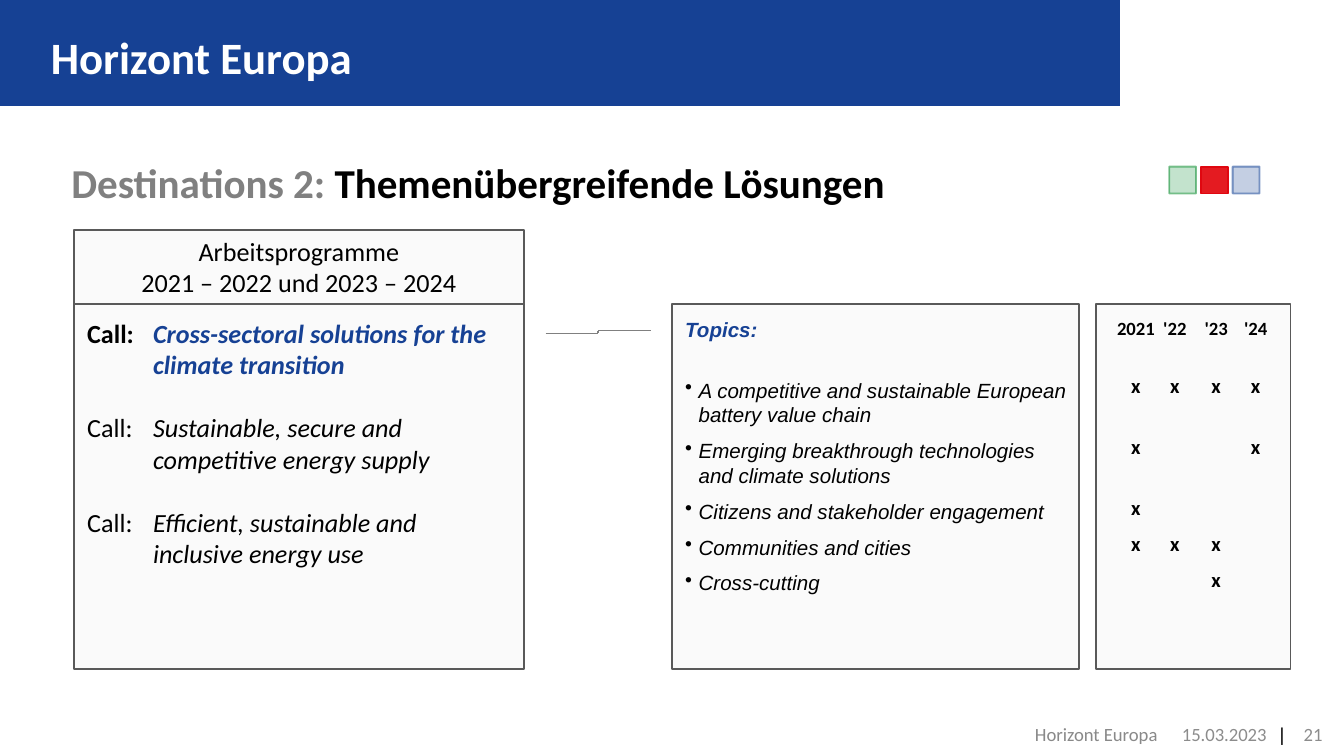
import itertools

import pptx
import pptx.dml.color
import pptx.enum.shapes
import pptx.enum.text
import pptx.oxml
import pptx.oxml.ns
import pptx.util

Pt = pptx.util.Pt
RGB = pptx.dml.color.RGBColor
ALIGN = pptx.enum.text.PP_ALIGN
ANCHOR = pptx.enum.text.MSO_ANCHOR
RECT = pptx.enum.shapes.MSO_SHAPE.RECTANGLE
LINE = pptx.enum.shapes.MSO_CONNECTOR.STRAIGHT

BLUE = RGB(0x16, 0x41, 0x94)
WHITE = RGB(0xFF, 0xFF, 0xFF)
BLACK = RGB(0, 0, 0)
GRAY = RGB(0x80, 0x80, 0x80)
PALE = RGB(0xFA, 0xFA, 0xFA)
EDGE = RGB(0x59, 0x59, 0x59)
DATE = RGB(0x8C, 0x8C, 0x8C)
FOOT = RGB(0x89, 0x89, 0x89)
MARKS = [
    (RGB(0x10, 0x92, 0x38), RGB(0x01, 0x88, 0x26), True),
    (RGB(0xE4, 0x1B, 0x21), RGB(0xE0, 0x07, 0x10), False),
    (RGB(0x14, 0x43, 0x93), RGB(0x04, 0x36, 0x8F), True),
]
CALLS = [
    "Cross-sectoral solutions for the climate transition",
    "Sustainable, secure and competitive energy supply",
    "Efficient, sustainable and inclusive energy use",
]
TOPICS = [
    "A competitive and sustainable European battery value chain",
    "Emerging breakthrough technologies and climate solutions",
    "Citizens and stakeholder engagement",
    "Communities and cities",
    "Cross-cutting",
]
YEARS = [
    ("\t2021\t'22\t'23\t'24", 10, 0),
    ("\tx\tx\tx\tx", 11, 18),
    ("\tx\t\t\tx", 11, 19.4),
    ("\tx", 11, 19.4),
    ("\tx\tx\tx", 11, 6),
    ("\t\t\tx", 11, 6),
]


def apply(thing, form):
    """Set each attribute in form on thing."""
    for key, value in form.items():
        setattr(thing, key, value)


def place(shape, box):
    """Move a shape to a box given in points."""
    apply(shape, dict(zip(("left", "top", "width", "height"), map(Pt, box))))


def frame(shape, pads=(7.2, 7.2, 7.2, 7.2), anchor=ANCHOR.TOP, wrap=True):
    """Set the text margins and anchor of a shape and return its frame."""
    text = shape.text_frame
    names = ("margin_left", "margin_top", "margin_right", "margin_bottom")
    apply(text, dict(zip(names, map(Pt, pads))))
    apply(text, {"auto_size": pptx.enum.text.MSO_AUTO_SIZE.NONE,
                 "vertical_anchor": anchor, "word_wrap": wrap})
    return text


def write(text, runs, size, face="Calibri", first=True, before=0,
          align=ALIGN.LEFT, hang=0, tabs=(), mark=None, lead=None):
    """Write one paragraph from (text, colour, bold, italic) runs."""
    para = text.paragraphs[0] if first else text.add_paragraph()
    apply(para, {"alignment": align, "space_before": Pt(before)})
    if lead:
        para.line_spacing = Pt(lead)
    props = para._p.get_or_add_pPr()
    if hang or not tabs:
        props.set("marL", str(Pt(hang)))
        props.set("indent", str(-Pt(hang)))
    bullet = pptx.oxml.ns.qn("a:buChar" if mark else "a:buNone")
    props.append(props.makeelement(bullet, {"char": mark} if mark else {}))
    if tabs:
        stops = props.makeelement(pptx.oxml.ns.qn("a:tabLst"), {})
        for stop, kind in tabs:
            stops.append(stops.makeelement(
                pptx.oxml.ns.qn("a:tab"), {"pos": str(Pt(stop)), "algn": kind}))
        props.append(stops)
    for words, tint, bold, slant in runs:
        run = para.add_run()
        run.text = words
        apply(run.font, {"name": face, "size": Pt(size), "bold": bold, "italic": slant})
        run.font.color.rgb = tint


def fade(fill, share):
    """Make a solid fill partly clear."""
    tint = fill._xPr.find(".//" + pptx.oxml.ns.qn("a:srgbClr"))
    tint.append(tint.makeelement(
        pptx.oxml.ns.qn("a:alpha"), {"val": str(share * 1000)}))


def panel(slide, box, fill=PALE, edge=EDGE):
    """Add a plain box with a fill and an optional edge."""
    shape = slide.shapes.add_shape(RECT, *map(Pt, box))
    shape.shadow.inherit = False
    shape.fill.solid()
    shape.fill.fore_color.rgb = fill
    if edge is None:
        shape.line.fill.background()
    else:
        shape.line.color.rgb = edge
        shape.line.width = Pt(1)
    return shape


def header(slide, box):
    """Draw the blue bar with the slide title on it."""
    left, top, width, height = box
    bar = panel(slide, box, BLUE, None)
    slide.shapes._spTree.insert(2, bar._element)
    title = slide.shapes.title
    place(title, (left + 20, top + 10, width - 61, height - 16.5))
    text = frame(title, (7.2, 3.6, 7.2, 3.6), ANCHOR.MIDDLE)
    write(text, [("Horizont Europa", WHITE, True, False)], 24)


def heading(slide, box):
    """Fill the body placeholder with the heading."""
    body = slide.placeholders[1]
    place(body, box)
    text = frame(body, (7.2, 3.6, 7.2, 3.6), ANCHOR.MIDDLE)
    write(text, [("Destinations 2: ", GRAY, True, False),
                 ("Themenübergreifende Lösungen", BLACK, True, False)], 22)


def program(slide, box):
    """Draw the work programme head and its list of calls."""
    left, top, width, height = box
    cap = 39.6
    text = frame(panel(slide, (left, top, width, cap)), anchor=ANCHOR.MIDDLE)
    for rank, words in enumerate(("Arbeitsprogramme", "2021 – 2022 und 2023 – 2024")):
        write(text, [(words, BLACK, False, False)], 14,
              first=rank == 0, align=ALIGN.CENTER)
    text = frame(panel(slide, (left, top + cap, width, height - cap)))
    for rank, call in enumerate(CALLS):
        lead = rank == 0
        write(text, [("Call:\t", BLACK, lead, False),
                     (call, BLUE if lead else BLACK, lead, True)], 14,
              first=lead, before=0 if lead else 17, hang=35.3, tabs=[(35.3, "l")])


def topics(slide, box):
    """Draw the list of topics."""
    text = frame(panel(slide, box), (7.2, 7.2, 5, 7.2))
    write(text, [("Topics:", BLUE, True, True)], 11, "Arial", lead=13.2)
    for rank, topic in enumerate(TOPICS):
        write(text, [(topic, BLACK, False, True)], 11, "Arial", first=False,
              before=6 if rank else 19.2, hang=7.2, mark="•", lead=13.2)


def years(slide, box):
    """Draw the years in which each topic is open."""
    text = frame(panel(slide, box))
    tabs = [(stop, "ctr") for stop in (14.4, 35.3, 57.4, 78.6)]
    for rank, (words, size, before) in enumerate(YEARS):
        write(text, [(words, BLACK, True, False)], size,
              first=rank == 0, before=before, tabs=tabs)


def elbow(slide, box):
    """Draw the stepped line from the calls to the topics."""
    left, top, width, height = box
    mid, low = left + width / 2, top + height
    points = [(left, low), (mid, low), (mid, top), (left + width, top)]
    for start, end in itertools.pairwise(points):
        line = slide.shapes.add_connector(LINE, *map(Pt, start + end))
        line.line.color.rgb = GRAY
        line.line.width = Pt(0.75)
        props = line._element.spPr
        props.append(props.makeelement(pptx.oxml.ns.qn("a:effectLst"), {}))


def marks(slide, box):
    """Draw the row of small squares."""
    left, top, width, side = box
    step = (width - side) / (len(MARKS) - 1)
    for rank, (fill, edge, faint) in enumerate(MARKS):
        shape = panel(slide, (left + rank * step, top, side, side), fill, edge)
        if faint:
            fade(shape.fill, 25)
            fade(shape.line.fill, 50)


def footer(slide, box):
    """Write the footer, date, rule and page number."""
    left, top, width, height = box
    mid, right = ALIGN.CENTER, ALIGN.RIGHT
    parts = [
        ("Horizont Europa", 0, 334.8, FOOT, right, (7.2, 2.9, 7.2, 5.8)),
        ("15.03.2023", 336.2, 54.7, DATE, mid, (2.9, 2.9, 2.9, 5.8)),
        ("|", 390.2, 8.6, BLACK, mid, (2.9, 2.9, 2.9, 5.8)),
        ("21", width - 28.1, 28.1, DATE, right, (0, 2.9, 8.6, 5.8)),
    ]
    for words, shift, span, tint, align, pads in parts:
        shape = slide.shapes.add_textbox(*map(Pt, (left + shift, top, span, height)))
        text = frame(shape, pads, ANCHOR.MIDDLE, words != "|")
        face = "Arial" if words == "|" else "Calibri"
        write(text, [(words, tint, False, False)], 10, face, align=align)


def main():
    """Build and save the slide."""
    deck = pptx.Presentation()
    apply(deck, {"slide_width": Pt(720), "slide_height": Pt(405)})
    slide = deck.slides.add_slide(deck.slide_layouts[1])
    header(slide, (0, 0, 600, 56.8))
    heading(slide, (31, 66.2, 657.4, 62.6))
    program(slide, (39.6, 123.1, 241.2, 235.4))
    topics(slide, (360, 162.7, 218.2, 195.8))
    years(slide, (587, 162.7, 104.4, 195.8))
    elbow(slide, (292.3, 177.1, 56.2, 1.5))
    marks(slide, (626.4, 89.3, 48.4, 14.4))
    footer(slide, (292.3, 383.8, 424.8, 21.6))
    deck.save("out.pptx")


if __name__ == "__main__":
    main()
